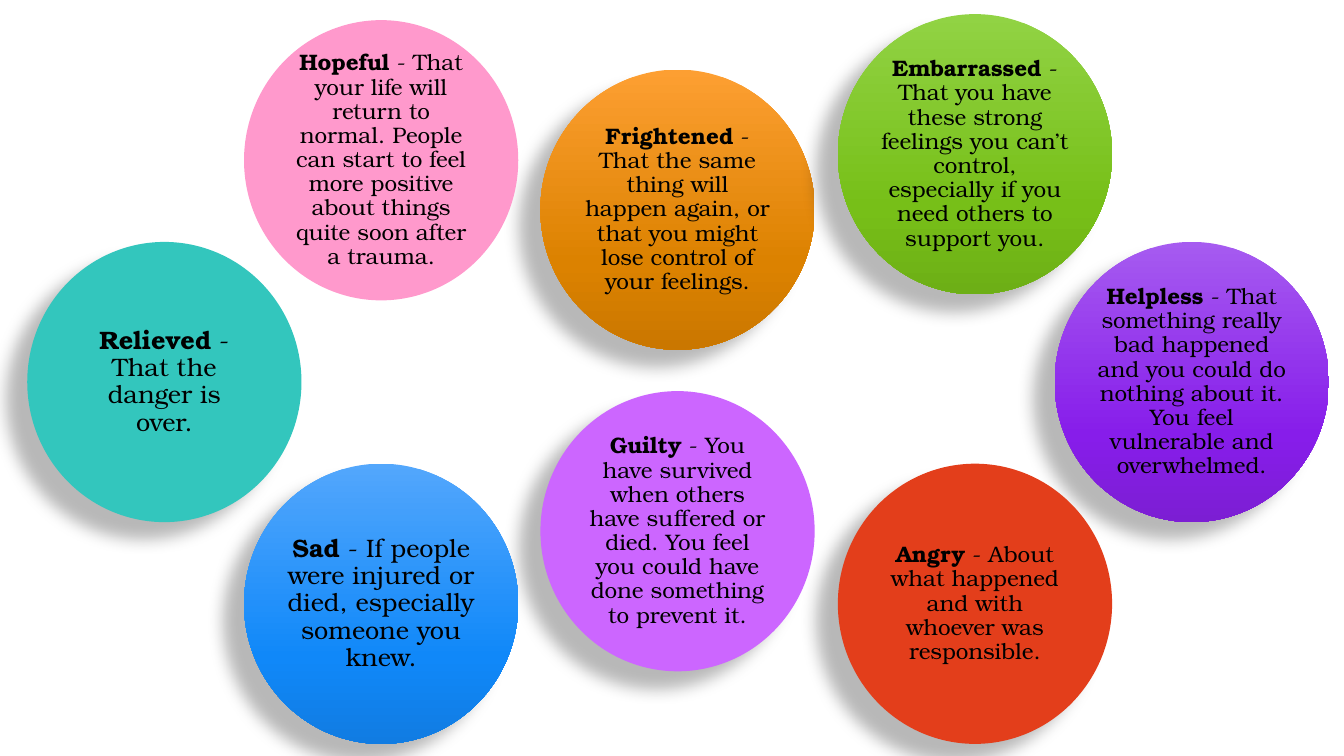
from lxml.etree import SubElement
from pptx import Presentation
from pptx.dml.color import RGBColor
from pptx.enum.shapes import MSO_SHAPE as Shape
from pptx.enum.text import MSO_ANCHOR as Anchor, PP_ALIGN as Align
from pptx.oxml import parse_xml
from pptx.oxml.ns import nsdecls, qn
from pptx.util import Inches, Pt

CIRCLE_WIDTH, CIRCLE_HEIGHT = 2.72, 2.78
TEXT_WIDTH, TEXT_HEIGHT = 1.92, 1.97

# left, top, colours from top to bottom, feeling, explanation, format
FEELINGS = [
    (5.36, 0.69, ["FD9F32", "DC8200", "CA7700"], "Frightened",
     "That the same thing will happen again, or that you might lose control "
     "of your feelings.", {}),
    (8.31, 0.14, ["91D344", "77BF18", "6DAF16"], "Embarrassed",
     "That you have these strong feelings you can’t control, especially if "
     "you need others to support you.", {}),
    (10.46, 2.4, ["A65BF0", "871DEA", "7C1ED3"], "Helpless",
     "That something really bad happened and you could do nothing about it. "
     "You feel vulnerable and overwhelmed.", {}),
    (8.31, 4.6, ["E33E1B"], "Angry",
     "About what happened and with whoever was responsible.", {}),
    (5.36, 3.88, ["CC66FF"], "Guilty",
     "You have survived when others have suffered or died. You feel you "
     "could have done something to prevent it.", {}),
    (2.42, 4.6, ["53A7FC", "1088F9", "117CE2"], "Sad",
     "If people were injured or died, especially someone you knew.",
     {"size": 18, "inset": 0.03}),
    (0.27, 2.4, ["33C6BD"], "Relieved", "That the danger is over.",
     {"size": 18, "width": 1.79}),
    (2.42, 0.2, ["FF99CC"], "Hopeful",
     "That your life will return to normal. People can start to feel more "
     "positive about things quite soon after a trauma.", {"shadow": False}),
]


def color(hex_code):
    return RGBColor.from_string(hex_code)


def add_span(para, text, size=16, bold=False, font="TeX Gyre Bonum",
             ink="000000"):
    span = para.add_run()
    span.text = text
    span.font.size = Pt(size)
    span.font.bold = bold
    span.font.name = font
    span.font.color.rgb = color(ink)


class FeelingsPage:
    def __init__(self, deck):
        self.page = deck.slides.add_slide(deck.slide_layouts[6])

    def fill(self, shape, colors):
        """Fill with one colour, or with three as a vertical gradient."""
        if len(colors) == 1:
            shape.fill.solid()
            shape.fill.fore_color.rgb = color(colors[0])
            return
        stops = "".join(
            f'<a:gs pos="{place * 1000}"><a:srgbClr val="{code}"/></a:gs>'
            for place, code in zip((0, 69, 100), colors))
        gradient = parse_xml(
            f'<a:gradFill {nsdecls("a")} rotWithShape="1"><a:gsLst>{stops}'
            '</a:gsLst><a:lin ang="5400000" scaled="0"/></a:gradFill>')
        shape._element.spPr.find(qn("a:prstGeom")).addnext(gradient)

    def cast_shadow(self, shape):
        effects = shape._element.spPr.find(qn("a:effectLst"))
        outer = SubElement(effects, qn("a:outerShdw"), blurRad=str(Pt(11.8)),
                           dist=str(Pt(19.7)), dir=str(141 * 60000),
                           algn="ctr", rotWithShape="0")
        shade = SubElement(outer, qn("a:srgbClr"), val="000000")
        SubElement(shade, qn("a:alpha"), val="28000")

    def circle(self, group, left, top, colors, shadow):
        shape = group.shapes.add_shape(
            Shape.OVAL, Inches(left), Inches(top),
            Inches(CIRCLE_WIDTH), Inches(CIRCLE_HEIGHT))
        shape.shadow.inherit = False
        shape.line.fill.background()
        self.fill(shape, colors)
        if shadow:
            self.cast_shadow(shape)

    def caption(self, group, left, top, name, reason, size, width, inset):
        box = group.shapes.add_textbox(
            Inches(left + (CIRCLE_WIDTH - width) / 2),
            Inches(top + (CIRCLE_HEIGHT - TEXT_HEIGHT) / 2),
            Inches(width), Inches(TEXT_HEIGHT))
        frame = box.text_frame
        frame.word_wrap = True
        frame.vertical_anchor = Anchor.MIDDLE
        frame.margin_left = frame.margin_right = Inches(inset)
        frame.margin_top = frame.margin_bottom = Inches(inset)
        para = frame.paragraphs[0]
        para.alignment = Align.CENTER
        para.line_spacing = 0.9
        add_span(para, name, size, bold=True)
        add_span(para, f" - {reason}", size)

    def feeling(self, left, top, colors, name, reason, size=16,
                width=TEXT_WIDTH, inset=0.02, shadow=True):
        group = self.page.shapes.add_group_shape()
        self.circle(group, left, top, colors, shadow)
        self.caption(group, left, top, name, reason, size, width, inset)


def main():
    deck = Presentation()
    deck.slide_width, deck.slide_height = Inches(13.33), Inches(7.5)
    page = FeelingsPage(deck)
    for *content, style in FEELINGS:
        page.feeling(*content, **style)
    deck.save("out.pptx")


if __name__ == "__main__":
    main()
